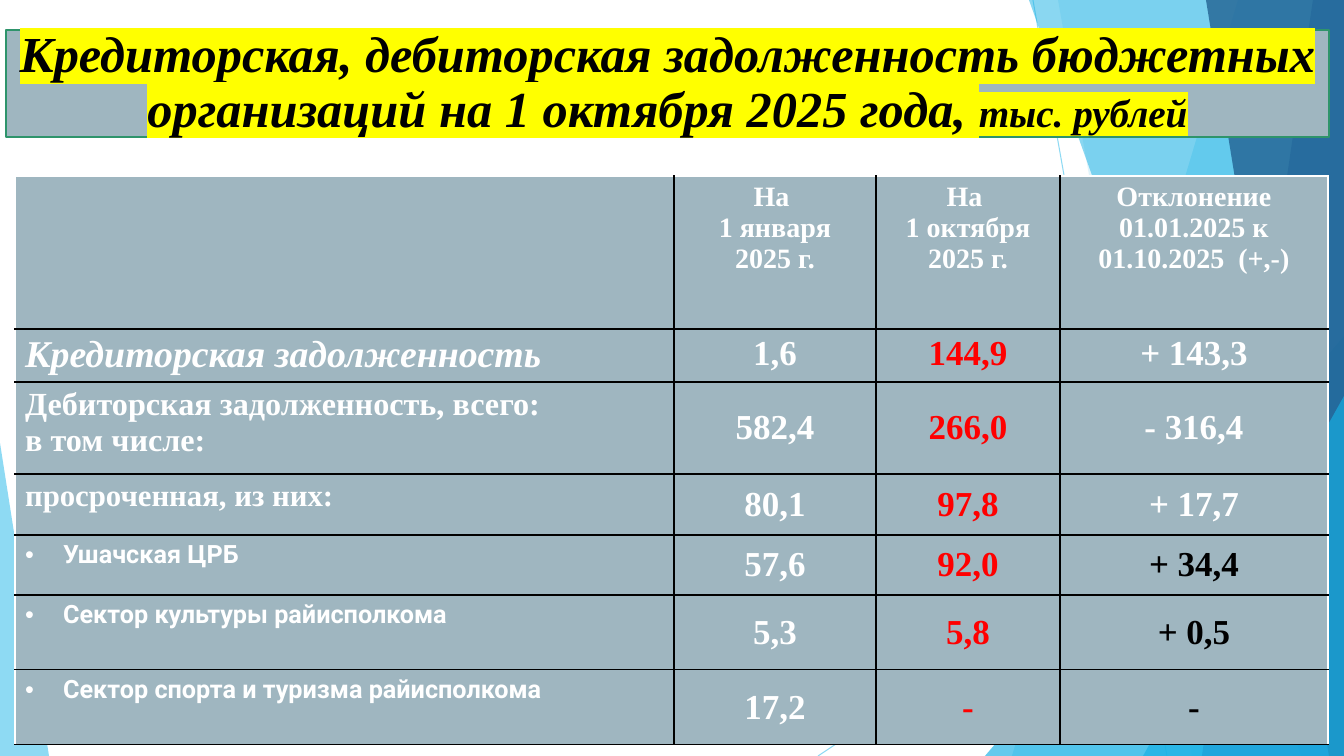
"""Builds a slide with a table of payables and receivables of budget organisations."""
from lxml import etree
from pptx import Presentation, util as u
from pptx.dml.color import RGBColor
from pptx.enum import shapes, text
from pptx.oxml.ns import qn

WHITE, BLACK = RGBColor(255, 255, 255), RGBColor(0, 0, 0)
RED = RGBColor(255, 0, 0)
GREY, GREEN = RGBColor(0x9F, 0xB6, 0xC0), RGBColor(0x2E, 0x94, 0x6B)
SKY, CYAN = RGBColor(0x5F, 0xCB, 0xEF), RGBColor(0x17, 0xB0, 0xE4)
BLUE, NAVY = RGBColor(0x2E, 0x83, 0xC3), RGBColor(0x22, 0x62, 0x92)
SERIF, SANS = "Times New Roman", "Roboto"
WIDTH, HEIGHT = 1344, 756

TITLE = [("Кредиторская, дебиторская задолженность бюджетных организаций на 1 октября 2025 года, ", 36),
         ("тыс. рублей", 28)]
TITLE_BOX = (6, 30, 1323, 107)
TABLE_AT = (15, 176)
COLUMNS = [659, 202, 184, 268]
ROWS = [153, 53, 92, 61, 60, 75, 75]
HEADERS = ["", "На \n1 января\n2025 г.", "На \n1 октября\n2025 г.",
           "Отклонение 01.01.2025 к 01.10.2025  (+,-)"]
LEFT, JUSTIFY = text.PP_ALIGN.LEFT, text.PP_ALIGN.JUSTIFY
CENTER = text.PP_ALIGN.CENTER
PLAIN = {"name": SERIF, "bold": True, "italic": False}
ITEM = {"name": SANS, "size": u.Pt(18)}
BODY = [
    ("Кредиторская задолженность", {"size": u.Pt(27), "italic": True}, LEFT,
     ["1,6", "144,9", "+ 143,3"], WHITE),
    ("Дебиторская задолженность, всего: \nв том числе:", {"size": u.Pt(23)}, JUSTIFY,
     ["582,4", "266,0", "- 316,4"], WHITE),
    ("просроченная, из них:", {"size": u.Pt(22)}, JUSTIFY, ["80,1", "97,8", "+ 17,7"], WHITE),
    ("Ушачская ЦРБ", ITEM, LEFT, ["57,6", "92,0", "+ 34,4"], BLACK),
    ("Сектор культуры райисполкома", ITEM, JUSTIFY, ["5,3", "5,8", "+ 0,5"], BLACK),
    ("Сектор спорта и туризма райисполкома", ITEM, JUSTIFY, ["17,2", "-", "-"], BLACK),
]

RAYS = [((1033, 0), (1167, HEIGHT)), ((WIDTH, 406), (818, HEIGHT))]
TRIANGLE = shapes.MSO_SHAPE.ISOSCELES_TRIANGLE
# Bands run from a top x to a bottom x and reach the right edge; facets are boxes with an apex.
BANDS_AND_FACETS = [
    ("band", (1238, 1012), SKY, 36),
    ("band", (1058, 1192), SKY, 20),
    ("facet", (985, 336, 359, 420, 1), CYAN, 66),
    ("band", (1029, 1301), CYAN, 50),
    ("band", (1313, 1202), BLUE, 70),
    ("band", (1206, 1329), NAVY, 80),
    ("facet", (1143, 396, 201, 360, 1), CYAN, 66),
    ("facet", (0, 443, 49, 313, 0), SKY, 70),
]


def px(*lengths):
    return [u.Emu(round(length * 914400 / 100.8)) for length in lengths]


def set_alpha(shape, percent):
    color = shape._element.spPr.find(".//" + qn("a:srgbClr"))
    etree.SubElement(color, qn("a:alpha"), val=str(percent * 1000))


def set_font(font, color, **values):
    for name, value in {**PLAIN, **values}.items():
        setattr(font, name, value)
    font.color.rgb = color


def add_background(slide):
    for start, end in RAYS:
        ray = slide.shapes.add_connector(shapes.MSO_CONNECTOR.STRAIGHT, *px(*start, *end))
        ray.line.color.rgb = SKY
        ray.line.width = u.Pt(0.75)
        set_alpha(ray, 70)
        etree.SubElement(ray._element.spPr, qn("a:effectLst"))
    for kind, place, color, alpha in BANDS_AND_FACETS:
        if kind == "band":
            top, bottom = place
            builder = slide.shapes.build_freeform(*px(top, 0))
            corners = [(WIDTH, 0), (WIDTH, HEIGHT), (bottom, HEIGHT)]
            builder.add_line_segments([px(*corner) for corner in corners])
            shape = builder.convert_to_shape()
        else:
            shape = slide.shapes.add_shape(TRIANGLE, *px(*place[:4]))
            shape.adjustments[0] = place[4]
        shape.shadow.inherit = False
        shape.fill.solid()
        shape.fill.fore_color.rgb = color
        set_alpha(shape, alpha)
        shape.line.fill.background()


def add_title(slide):
    title = slide.shapes.title
    title._element.getparent().append(title._element)
    title.left, title.top, title.width, title.height = px(*TITLE_BOX)
    title.fill.solid()
    title.fill.fore_color.rgb = GREY
    title.line.color.rgb = GREEN
    title.line.width = u.Pt(1)
    frame = title.text_frame
    frame.word_wrap = True
    frame.auto_size = text.MSO_AUTO_SIZE.NONE
    frame.vertical_anchor = text.MSO_ANCHOR.MIDDLE
    paragraph = frame.paragraphs[0]
    paragraph.alignment = CENTER
    paragraph.line_spacing = 0.9
    for words, size in TITLE:
        run = paragraph.add_run()
        run.text = words
        set_font(run.font, BLACK, size=u.Pt(size), italic=True)
        highlight = etree.Element(qn("a:highlight"))
        etree.SubElement(highlight, qn("a:srgbClr"), val="FFFF00")
        run.font._element.find(qn("a:solidFill")).addnext(highlight)


def set_borders(cell, colors):
    properties = cell._tc.get_or_add_tcPr()
    for side, color in zip("LRTB", colors):
        line = etree.SubElement(properties, qn("a:ln" + side), w=str(u.Pt(1)))
        fill = etree.SubElement(line, qn("a:solidFill"))
        etree.SubElement(fill, qn("a:srgbClr"), val=str(color))


def add_bullet(paragraph):
    properties = paragraph._p.get_or_add_pPr()
    indent = px(38)[0]
    properties.set("marL", str(indent))
    properties.set("indent", str(-indent))
    etree.SubElement(properties, qn("a:buFont"), typeface="Arial")
    etree.SubElement(properties, qn("a:buChar"), char="•")


def fill_cell(cell, words, color, alignment, values):
    cell.text = words
    for paragraph in cell.text_frame.paragraphs:
        paragraph.alignment = alignment
        if values["size"] == ITEM["size"]:
            add_bullet(paragraph)
        set_font(paragraph.font, color, **values)
        for run in paragraph.runs:
            set_font(run.font, color, **values)


def add_table(slide):
    size = (sum(COLUMNS), sum(ROWS))
    frame = slide.shapes.add_table(len(ROWS), len(COLUMNS), *px(*TABLE_AT, *size))
    table = frame.table
    for column, width in zip(table.columns, px(*COLUMNS)):
        column.width = width
    for row, height in zip(table.rows, px(*ROWS)):
        row.height = height
    last = len(COLUMNS) - 1
    for r in range(len(ROWS)):
        for c in range(len(COLUMNS)):
            cell = table.cell(r, c)
            outer = (c == 0, c == last, r == 0, False)
            set_borders(cell, [WHITE if edge else BLACK for edge in outer])
            cell.fill.solid()
            cell.fill.fore_color.rgb = GREY
            middle = r > 1 and c > 0
            cell.vertical_anchor = text.MSO_ANCHOR.MIDDLE if middle else text.MSO_ANCHOR.TOP
    for c, header in enumerate(HEADERS):
        fill_cell(table.cell(0, c), header, WHITE, CENTER, {"size": u.Pt(20)})
    for r, (label, values, alignment, amounts, change_color) in enumerate(BODY, 1):
        fill_cell(table.cell(r, 0), label, WHITE, alignment, values)
        for c, (amount, color) in enumerate(zip(amounts, (WHITE, RED, change_color)), 1):
            fill_cell(table.cell(r, c), amount, color, CENTER, {"size": u.Pt(25)})


def main():
    presentation = Presentation()
    presentation.slide_width, presentation.slide_height = px(WIDTH, HEIGHT)
    slide = presentation.slides.add_slide(presentation.slide_layouts[5])
    add_background(slide)
    add_title(slide)
    add_table(slide)
    presentation.save("out.pptx")


if __name__ == "__main__":
    main()
